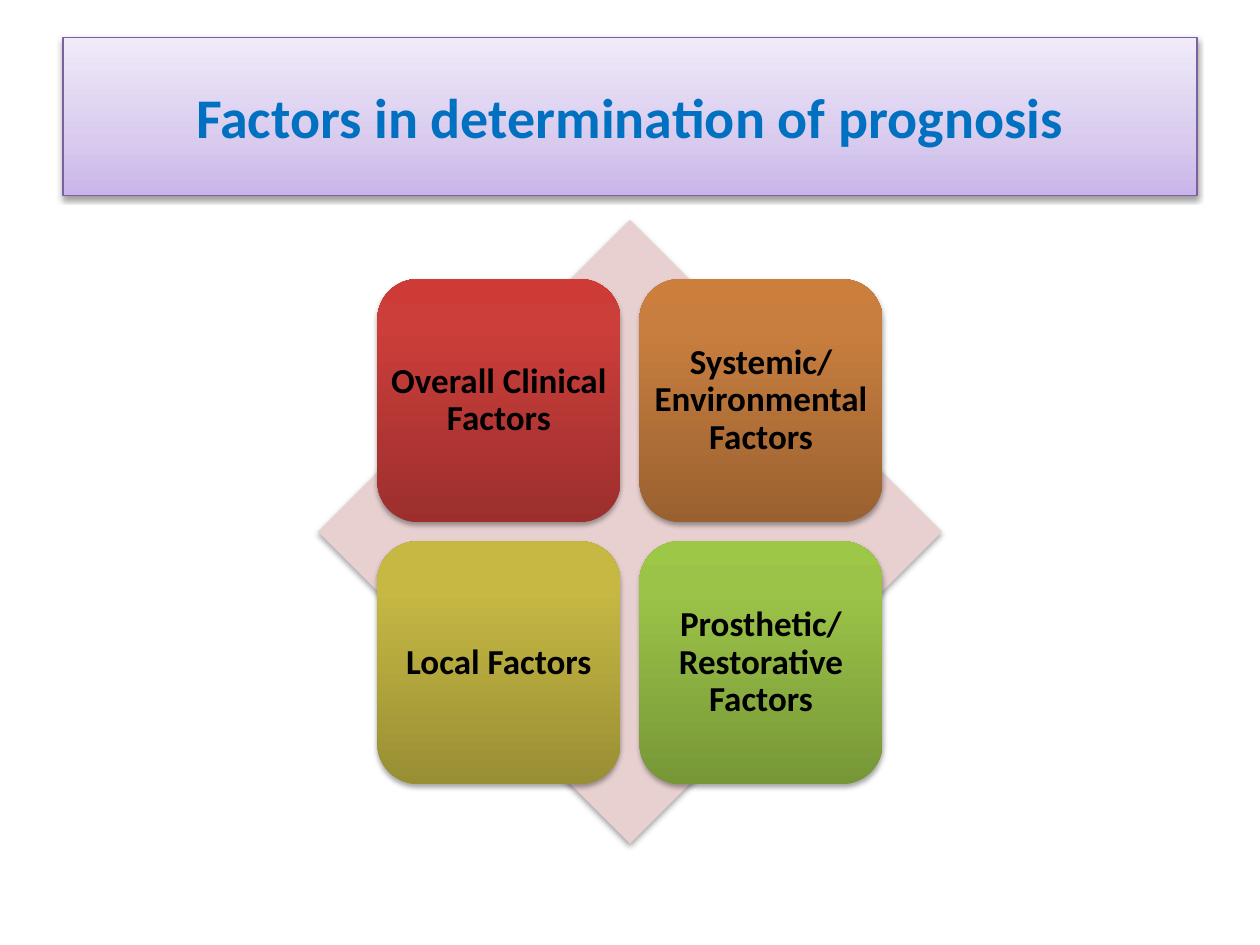
import pptx
import pptx.dml.color
import pptx.enum.shapes
import pptx.enum.text
import pptx.oxml
import pptx.oxml.ns
import pptx.util

Inches, Pt = pptx.util.Inches, pptx.util.Pt
RGB = pptx.dml.color.RGBColor.from_string
SHAPE = pptx.enum.shapes.MSO_SHAPE

# Content: tiles run row by row; gradient stops run from bottom to top
TITLE = "Factors in determination of prognosis"
TILES = [
    ("Overall Clinical Factors", [(0, "9C2F2D"), (80, "CB3E3A"), (100, "CE3B37")]),
    ("Systemic/ Environmental Factors", [(0, "9A6130"), (80, "C87E3F"), (100, "CC7E3C")]),
    ("Local Factors", [(0, "988E34"), (80, "C6B843"), (100, "C9BB41")]),
    ("Prosthetic/ Restorative Factors", [(0, "779737"), (80, "9BC348"), (100, "9DC746")]),
]
THEME = {
    "font": "Calibri",
    "title_size": 32,
    "title_color": "0070C0",
    "title_stops": [(0, "C9B5E8"), (35, "D8CBEE"), (100, "F0EAF9")],
    "title_line": "7D60A0",
    "tile_size": 20,
    "tile_color": "000000",
    "diamond": "E8D0D0",
}

# Layout in inches
CENTER_X, CENTER_Y = 5, 4.22
DIAMOND = 4.95
TILE, PITCH = 1.93, 2.08


def fill_gradient(s, stops):
    s.fill.gradient()
    s.fill.gradient_angle = 90
    stop_list = s._element.spPr.find(".//" + pptx.oxml.ns.qn("a:gsLst"))
    for old in list(stop_list):
        stop_list.remove(old)
    for pos, color in stops:
        stop_list.append(pptx.oxml.parse_xml(
            f'<a:gs {pptx.oxml.ns.nsdecls("a")} pos="{pos * 1000}">'
            f'<a:srgbClr val="{color}"/></a:gs>'))


def add_shadow(s, alpha, distance):
    s.shadow.inherit = False
    effects = s._element.spPr.find(pptx.oxml.ns.qn("a:effectLst"))
    effects.append(pptx.oxml.parse_xml(
        f'<a:outerShdw {pptx.oxml.ns.nsdecls("a")} blurRad="{Pt(3.1)}" '
        f'dist="{Pt(distance)}" dir="5400000" rotWithShape="0">'
        f'<a:srgbClr val="000000"><a:alpha val="{alpha * 1000}"/></a:srgbClr>'
        '</a:outerShdw>'))


def set_text(s, text, size, color):
    tf = s.text_frame
    tf.text = text
    tf.word_wrap = True
    tf.vertical_anchor = pptx.enum.text.MSO_ANCHOR.MIDDLE
    p = tf.paragraphs[0]
    p.alignment = pptx.enum.text.PP_ALIGN.CENTER
    p.font.name, p.font.size, p.font.bold = THEME["font"], Pt(size), True
    p.font.color.rgb = RGB(color)
    return tf


def add_square(slide, kind, center_x, center_y, size):
    s = slide.shapes.add_shape(kind, Inches(center_x - size / 2),
                               Inches(center_y - size / 2), Inches(size), Inches(size))
    s.line.fill.background()
    add_shadow(s, 35, 1.8)
    return s


def main():
    prs = pptx.Presentation()
    prs.slide_width, prs.slide_height = Inches(10), Inches(7.5)
    slide = prs.slides.add_slide(prs.slide_layouts[5])

    # Title banner
    title = slide.shapes.title
    title.left, title.top = Inches(0.5), Inches(0.3)
    title.width, title.height = Inches(9), Inches(1.25)
    fill_gradient(title, THEME["title_stops"])
    title.line.color.rgb = RGB(THEME["title_line"])
    title.line.width = Pt(0.75)
    add_shadow(title, 38, 1.6)
    set_text(title, TITLE, THEME["title_size"], THEME["title_color"])

    # Diamond behind the tiles
    diamond = add_square(slide, SHAPE.DIAMOND, CENTER_X, CENTER_Y, DIAMOND)
    diamond.fill.solid()
    diamond.fill.fore_color.rgb = RGB(THEME["diamond"])

    # Two-by-two tiles around the centre
    for i, (text, stops) in enumerate(TILES):
        row, col = divmod(i, 2)
        tile = add_square(slide, SHAPE.ROUNDED_RECTANGLE,
                          CENTER_X + (col - 0.5) * PITCH,
                          CENTER_Y + (row - 0.5) * PITCH, TILE)
        fill_gradient(tile, stops)
        tf = set_text(tile, text, THEME["tile_size"], THEME["tile_color"])
        tf.margin_left = tf.margin_right = tf.margin_top = tf.margin_bottom = 0
        tf.paragraphs[0].line_spacing = 0.9

    prs.save("out.pptx")


if __name__ == "__main__":
    main()
